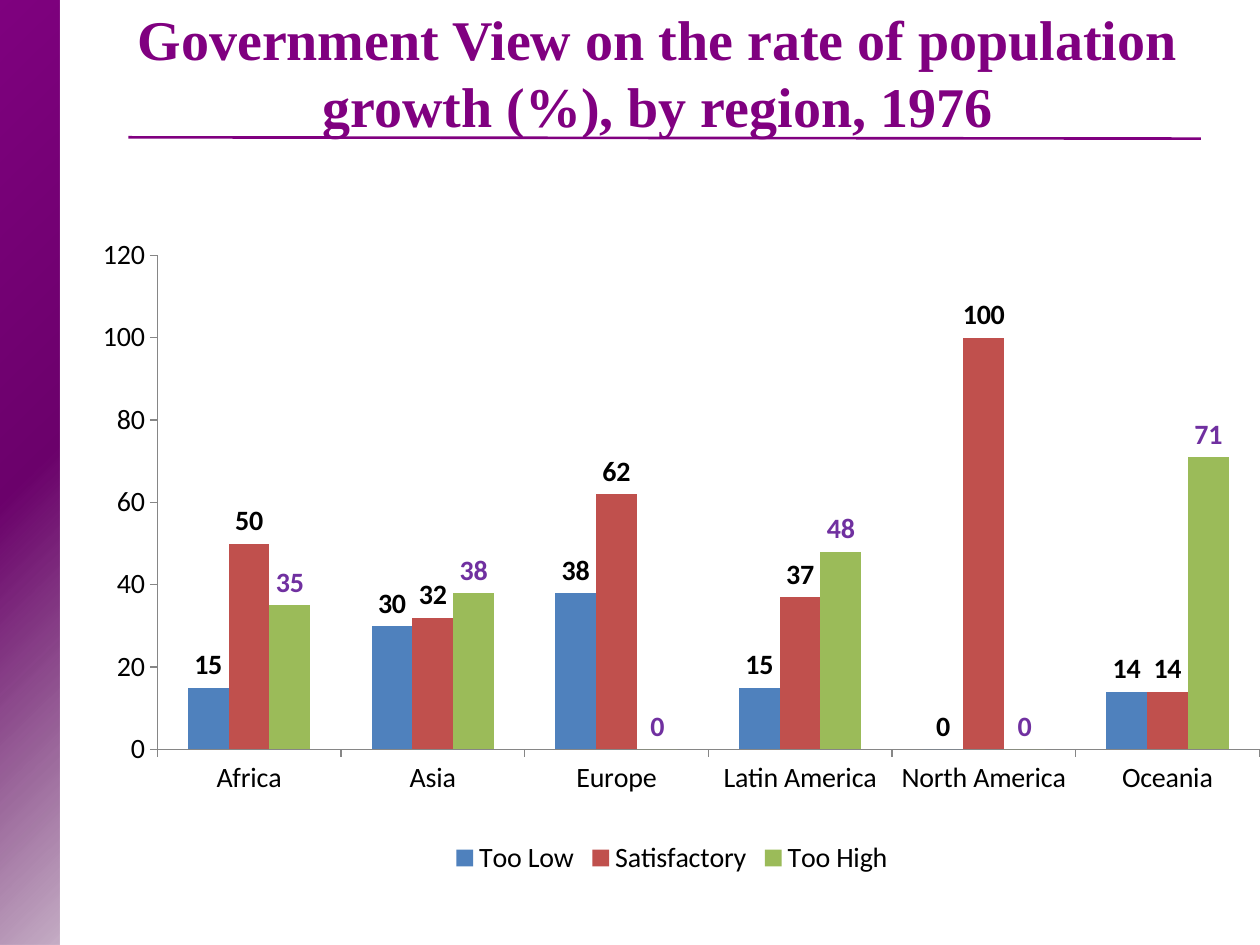
from lxml import etree
from pptx import Presentation
from pptx.chart.data import CategoryChartData
from pptx.dml.color import RGBColor
from pptx.enum.chart import XL_CHART_TYPE, XL_LABEL_POSITION, XL_LEGEND_POSITION, XL_TICK_MARK
from pptx.enum.shapes import MSO_CONNECTOR, MSO_SHAPE
from pptx.enum.text import MSO_ANCHOR, PP_ALIGN
from pptx.oxml import parse_xml
from pptx.oxml.ns import nsdecls, qn
from pptx.util import Inches, Pt

COLUMNS = XL_CHART_TYPE.COLUMN_CLUSTERED
OUTSIDE_END = XL_LABEL_POSITION.OUTSIDE_END
BOTTOM_LEGEND = XL_LEGEND_POSITION.BOTTOM
TICK_OUT = XL_TICK_MARK.OUTSIDE
STRAIGHT = MSO_CONNECTOR.STRAIGHT
RECTANGLE = MSO_SHAPE.RECTANGLE
BOTTOM = MSO_ANCHOR.BOTTOM
CENTER = PP_ALIGN.CENTER

WIDTH, HEIGHT = Inches(10), Inches(7.5)
PURPLE = "800080"
BLACK = "000000"
AXIS_GRAY = "868686"

REGIONS = ["Africa", "Asia", "Europe", "Latin America", "North America", "Oceania"]
# name, values, column colour, label colour
VIEWS = [
    ("Too Low", (15, 30, 38, 15, 0, 14), "4F81BD", BLACK),
    ("Satisfactory", (50, 32, 62, 37, 100, 14), "C0504D", BLACK),
    ("Too High", (35, 38, 0, 48, 0, 71), "9BBB59", "7030A0"),
]
PLOT_AREA = {"x": 0.062, "y": 0.062, "w": 0.938, "h": 0.741}


def rgb(hex_color):
    return RGBColor.from_string(hex_color)


def format_font(font, name="Calibri", size=16, color=BLACK, bold=False):
    font.name = name
    font.size = Pt(size)
    font.color.rgb = rgb(color)
    font.bold = bold


def add_text(slide, text, left, top, width, height, align=CENTER, anchor=BOTTOM, **font):
    frame = slide.shapes.add_textbox(left, top, width, height).text_frame
    frame.word_wrap = True
    frame.vertical_anchor = anchor
    paragraph = frame.paragraphs[0]
    paragraph.alignment = align
    run = paragraph.add_run()
    run.text = text
    format_font(run.font, **font)


def add_side_band(slide, width):
    """Full-height band, fading towards its bottom right corner."""
    band = slide.shapes.add_shape(RECTANGLE, 0, 0, width, HEIGHT)
    band.shadow.inherit = False
    band.line.fill.background()
    band.fill.background()
    no_fill = band._element.spPr.find(qn("a:noFill"))
    gradient = parse_xml(
        f'<a:gradFill {nsdecls("a")} rotWithShape="1"><a:gsLst>'
        '<a:gs pos="0"><a:srgbClr val="4C004C"><a:alpha val="32000"/></a:srgbClr></a:gs>'
        '<a:gs pos="50000"><a:srgbClr val="6C006C"/></a:gs>'
        f'<a:gs pos="100000"><a:srgbClr val="{PURPLE}"/></a:gs></a:gsLst>'
        '<a:path path="circle"><a:fillToRect l="100000" t="100000"/></a:path>'
        '</a:gradFill>')
    band._element.spPr.replace(no_fill, gradient)


def add_rule(slide, start, end, color, weight):
    rule = slide.shapes.add_connector(STRAIGHT, *start, *end)
    rule.line.color.rgb = rgb(color)
    rule.line.width = Pt(weight)
    etree.SubElement(rule._element.spPr, qn("a:effectLst"))


def format_axis(axis):
    axis.has_major_gridlines = False
    axis.major_tick_mark = TICK_OUT
    axis.format.line.color.rgb = rgb(AXIS_GRAY)
    format_font(axis.tick_labels.font)


def set_plot_area(chart, area):
    """Fix the inner plot area, given as shares of the chart's size."""
    plot_area = chart._chartSpace.chart.plotArea
    for automatic in plot_area.findall(qn("c:layout")):
        plot_area.remove(automatic)
    modes = "".join(f'<c:{side}Mode val="edge"/>' for side in "xy")
    shares = "".join(f'<c:{key} val="{share}"/>' for key, share in area.items())
    plot_area.insert(0, parse_xml(
        f'<c:layout {nsdecls("c")}><c:manualLayout><c:layoutTarget val="inner"/>'
        f'{modes}{shares}</c:manualLayout></c:layout>'))


def format_series(series, fill, label_color):
    series.format.fill.solid()
    series.format.fill.fore_color.rgb = rgb(fill)
    series.invert_if_negative = False
    labels = series.data_labels
    labels.show_value = True
    labels.position = OUTSIDE_END
    format_font(labels.font, color=label_color, bold=True)


def add_views_chart(slide, left, top, width, height):
    data = CategoryChartData()
    data.categories = REGIONS
    for name, values, _, _ in VIEWS:
        data.add_series(name, values)
    chart = slide.shapes.add_chart(COLUMNS, left, top, width, height, data).chart
    chart.has_title = False
    format_font(chart.font, size=10)
    chart.has_legend = True
    chart.legend.position = BOTTOM_LEGEND
    chart.legend.include_in_layout = False
    format_font(chart.legend.font)
    for axis in (chart.category_axis, chart.value_axis):
        format_axis(axis)
    chart.value_axis.minimum_scale = 0
    chart.value_axis.maximum_scale = 120
    chart.value_axis.major_unit = 20
    plot = chart.plots[0]
    plot.vary_by_categories = False
    plot.gap_width = 150
    plot.overlap = 0
    for series, (_, _, fill, label_color) in zip(plot.series, VIEWS):
        format_series(series, fill, label_color)
    set_plot_area(chart, PLOT_AREA)


def main():
    deck = Presentation()
    deck.slide_width, deck.slide_height = WIDTH, HEIGHT
    slide = deck.slides.add_slide(deck.slide_layouts[6])
    add_side_band(slide, Inches(0.47))
    add_rule(slide, (Inches(9.53), Inches(1.1)), (Inches(1.02), Inches(1.09)), PURPLE, 1.5)
    add_text(slide, "Government View on the rate of population growth (%), by region, 1976",
             Inches(0.98), Inches(0.13), Inches(8.48), Inches(1.02),
             name="Times New Roman", size=32, color=PURPLE, bold=True)
    chart_left, chart_top = Inches(0.67), Inches(1.7)
    add_views_chart(slide, chart_left, chart_top, WIDTH - chart_left, Inches(5.29))
    deck.save("out.pptx")


if __name__ == "__main__":
    main()
